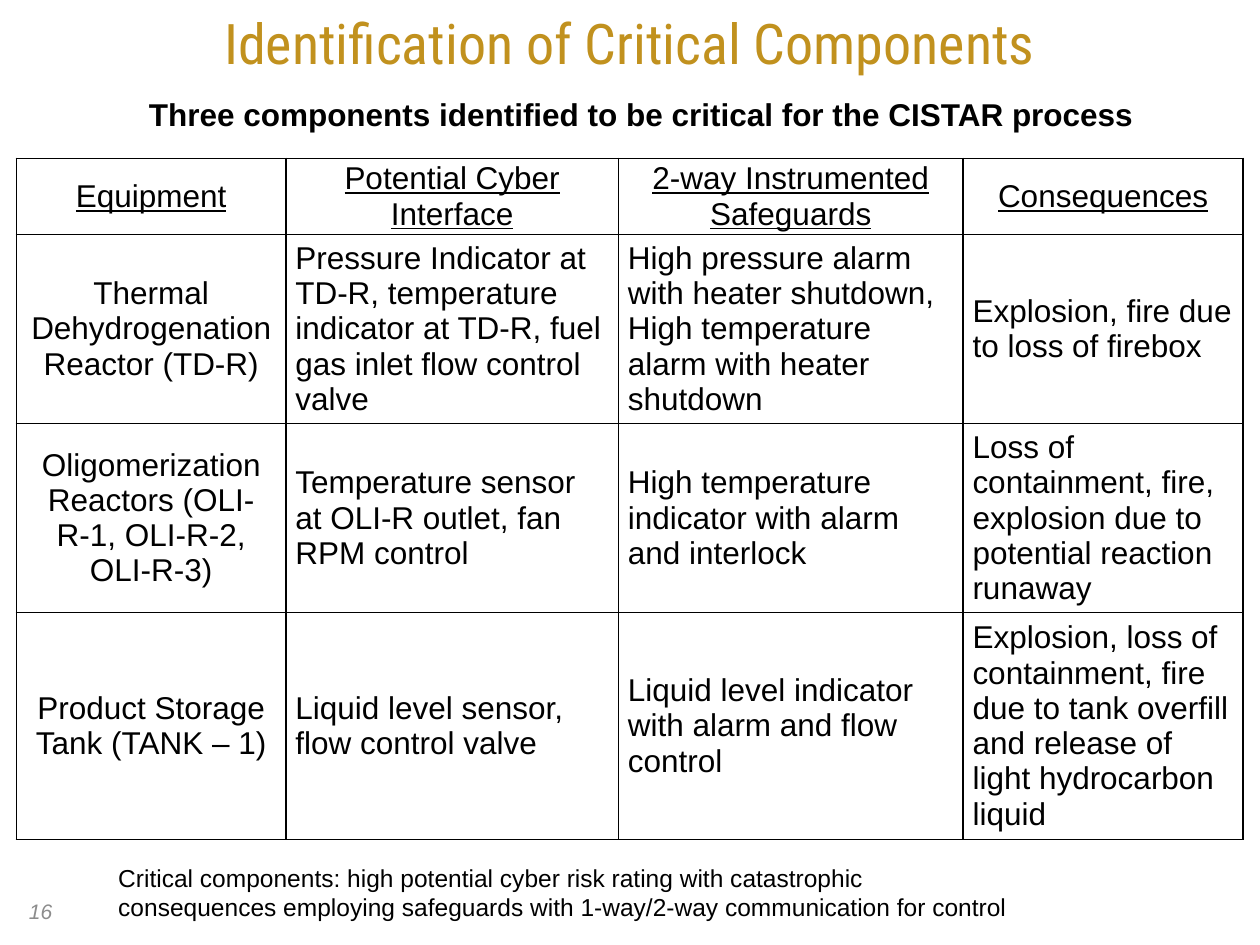
"""Build the slide on critical components: a heading, a table and a footnote."""
from lxml import etree
from pptx import Presentation
from pptx.dml.color import RGBColor
from pptx.enum.text import MSO_ANCHOR, MSO_AUTO_SIZE, PP_ALIGN
from pptx.oxml.ns import qn
from pptx.util import Pt

LEFT, CENTER = PP_ALIGN.LEFT, PP_ALIGN.CENTER
TOP, MIDDLE = MSO_ANCHOR.TOP, MSO_ANCHOR.MIDDLE
NO_FIT = MSO_AUTO_SIZE.NONE
COLORS = {"gold": "C1911E", "ink": "000000", "gray": "8C8C8C"}


def style(frame, size, color="ink", align=LEFT, face="Arial", **flags):
    for para in frame.paragraphs:
        para.alignment = align
        for run in para.runs:
            font = run.font
            font.name, font.size = face, Pt(size)
            font.color.rgb = RGBColor.from_string(COLORS[color])
            for name, value in flags.items():
                setattr(font, name, value)


def label(box, text, anchor, size, **look):
    frame = slide.shapes.add_textbox(*map(Pt, box)).text_frame
    frame.word_wrap = True
    frame.vertical_anchor = anchor
    frame.text = text
    style(frame, size, **look)


deck = Presentation()
deck.slide_width, deck.slide_height = Pt(720), Pt(540)
slide = deck.slides.add_slide(deck.slide_layouts[5])

title = slide.shapes.title
title.left, title.top, title.width, title.height = Pt(0), Pt(5), Pt(720), Pt(42.5)
frame = title.text_frame
frame.margin_left = frame.margin_right = frame.margin_top = frame.margin_bottom = 0
frame.vertical_anchor = TOP
frame.auto_size = NO_FIT
frame.text = "Identification of Critical Components"
style(frame, 32, "gold", CENTER, "Roboto Condensed")

label((6.5, 51, 720, 29), "Three components identified to be critical for the CISTAR process",
      TOP, 18, align=CENTER, bold=True)

rows = [
    ["Equipment", "Potential Cyber Interface", "2-way Instrumented Safeguards", "Consequences"],
    ["Thermal Dehydrogenation Reactor (TD-R)",
     "Pressure Indicator at TD-R, temperature indicator at TD-R, fuel gas inlet flow control valve",
     "High pressure alarm with heater shutdown,\nHigh temperature alarm with heater shutdown",
     "Explosion, fire due to loss of firebox"],
    ["Oligomerization Reactors (OLI-R-1, OLI-R-2, OLI-R-3)",
     "Temperature sensor at OLI-R outlet, fan RPM control",
     "High temperature indicator with alarm and interlock",
     "Loss of containment, fire, explosion due to potential reaction runaway"],
    ["Product Storage Tank (TANK – 1)",
     "Liquid level sensor, flow control valve",
     "Liquid level indicator with alarm and flow control",
     "Explosion, loss of containment, fire due to tank overfill and release of light hydrocarbon liquid"],
]
widths = [154, 190, 197, 160]
heights = [43.5, 108, 108, 129.5]
table = slide.shapes.add_table(4, 4, Pt(9.4), Pt(90.5), Pt(sum(widths)), Pt(sum(heights))).table
table.horz_banding = False
for col, width in zip(table.columns, widths):
    col.width = Pt(width)
for row, height in zip(table.rows, heights):
    row.height = Pt(height)

for r, texts in enumerate(rows):
    for c, text in enumerate(texts):
        cell = table.cell(r, c)
        cell.text = text
        cell.vertical_anchor = MIDDLE
        cell.margin_left = cell.margin_right = Pt(5.4)
        cell.margin_top = cell.margin_bottom = 0
        head = r == 0
        style(cell.text_frame, 18, align=CENTER if head or c == 0 else LEFT,
              bold=False, underline=head)
        props = cell._tc.get_or_add_tcPr()
        for side in ("lnL", "lnR", "lnT", "lnB"):
            line = etree.SubElement(props, qn("a:" + side), w=str(Pt(1)))
            fill = etree.SubElement(line, qn("a:solidFill"))
            etree.SubElement(fill, qn("a:srgbClr"), val=COLORS["ink"])
        cell.fill.background()

label((60.5, 489.5, 523, 41),
      "Critical components: high potential cyber risk rating with catastrophic "
      "consequences employing safeguards with 1-way/2-way communication for control", TOP, 14)
label((9.4, 506, 168, 29), "16", MIDDLE, 12, color="gray", italic=True)

deck.save("out.pptx")
